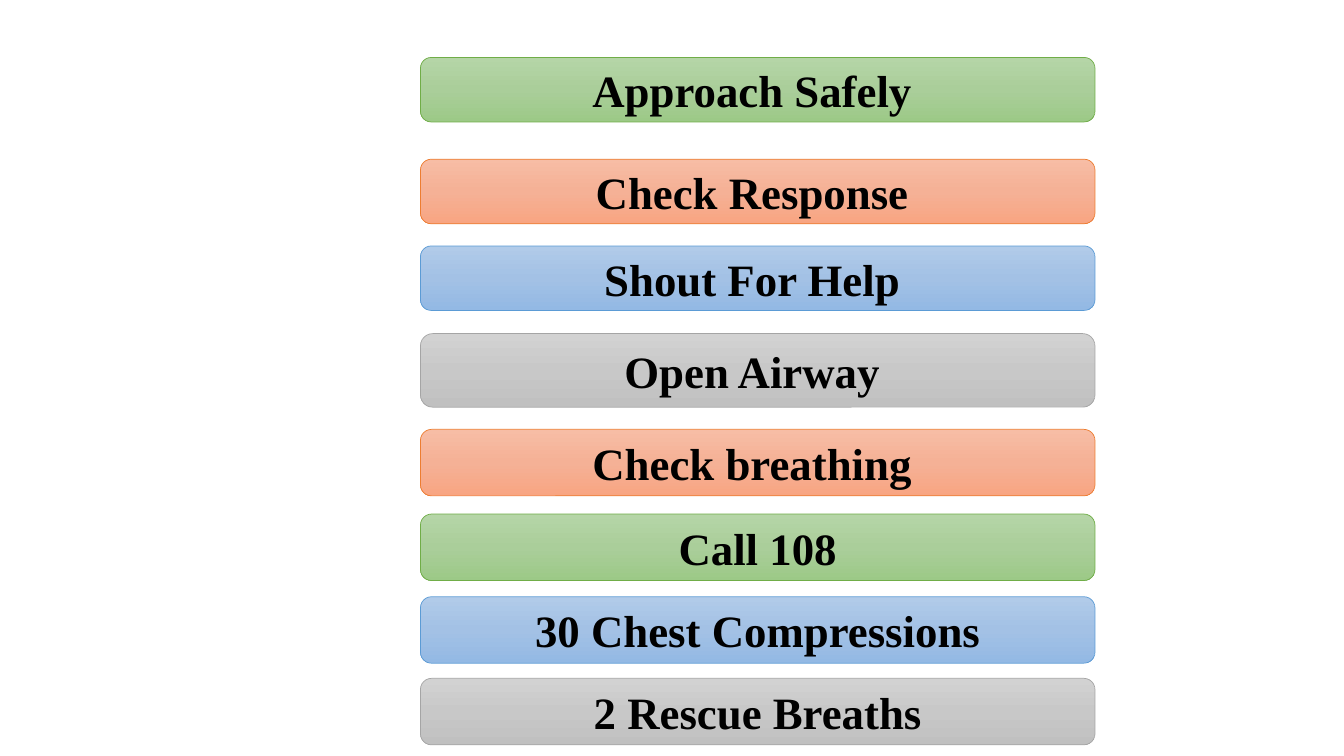
from copy import deepcopy
from dataclasses import dataclass

from pptx import Presentation
from pptx.dml.color import RGBColor
from pptx.enum.shapes import MSO_SHAPE
from pptx.enum.text import MSO_ANCHOR, PP_ALIGN
from pptx.oxml.ns import qn
from pptx.util import Inches, Pt

ROUNDED = MSO_SHAPE.ROUNDED_RECTANGLE
MIDDLE = MSO_ANCHOR.MIDDLE
CENTER = PP_ALIGN.CENTER


@dataclass(frozen=True)
class Tone:
    """Gradient colours from top to bottom, and the outline colour."""
    stops: tuple
    line: str


@dataclass(frozen=True)
class Theme:
    """Colours, font and sizes of the slide."""
    green: Tone = Tone(("B5D5A7", "AACE9A", "9CC987"), "70AD47")
    orange: Tone = Tone(("F7BDA5", "F5B196", "F8A582"), "ED7D31")
    blue: Tone = Tone(("B1CBE9", "A3C1E5", "93B9E4"), "5B9BD5")
    gray: Tone = Tone(("D2D2D2", "C8C8C8", "C0C0C0"), "A5A5A5")
    ink: str = "000000"
    font: str = "Times New Roman"
    step_size: float = 32
    line_width: float = 0.5


THEME = Theme()
STEP_LEFT, STEP_WIDTH = 4.17, 6.69
STEPS = (
    ("Approach Safely ", THEME.green, 0.57, 0.64),
    ("Check Response ", THEME.orange, 1.58, 0.64),
    ("Shout For Help ", THEME.blue, 2.44, 0.64),
    ("Open Airway ", THEME.gray, 3.31, 0.73),
    ("Check breathing ", THEME.orange, 4.26, 0.66),
    ("Call 108", THEME.green, 5.1, 0.66),
    ("30 Chest Compressions", THEME.blue, 5.92, 0.66),
    ("2 Rescue Breaths", THEME.gray, 6.73, 0.66),
)


def write_text(frame, text, *, size, color, font=THEME.font, bold=False, align=CENTER):
    """Write one formatted line, vertically centred in its frame."""
    frame.word_wrap = True
    frame.vertical_anchor = MIDDLE
    paragraph = frame.paragraphs[0]
    paragraph.alignment = align
    run = paragraph.add_run()
    run.text = text
    run.font.name = font
    run.font.size = Pt(size)
    run.font.bold = bold
    run.font.color.rgb = RGBColor.from_string(color)


def fill_gradient(shape, colors):
    """Fill a shape from top to bottom with evenly spaced colours."""
    shape.fill.gradient()
    shape.fill.gradient_angle = 270
    stop_list = shape.element.find(".//" + qn("a:gsLst"))
    while len(stop_list) < len(colors):
        stop_list.append(deepcopy(stop_list[0]))
    for index, (stop, color) in enumerate(zip(shape.fill.gradient_stops, colors)):
        stop.position = index / (len(colors) - 1)
        stop.color.rgb = RGBColor.from_string(color)


def add_step(slide, text, tone, top, height):
    """Add one rounded bar holding a step of the rescue sequence."""
    bar = slide.shapes.add_shape(
        ROUNDED, Inches(STEP_LEFT), Inches(top), Inches(STEP_WIDTH), Inches(height))
    bar.shadow.inherit = False
    fill_gradient(bar, tone.stops)
    bar.line.color.rgb = RGBColor.from_string(tone.line)
    bar.line.width = Pt(THEME.line_width)
    write_text(bar.text_frame, text, size=THEME.step_size, color=THEME.ink, bold=True)


def main():
    """Build the slide and save it."""
    deck = Presentation()
    deck.slide_width, deck.slide_height = Inches(13.33), Inches(7.5)
    slide = deck.slides.add_slide(deck.slide_layouts[6])
    for step in STEPS:
        add_step(slide, *step)
    deck.save("out.pptx")


if __name__ == "__main__":
    main()
